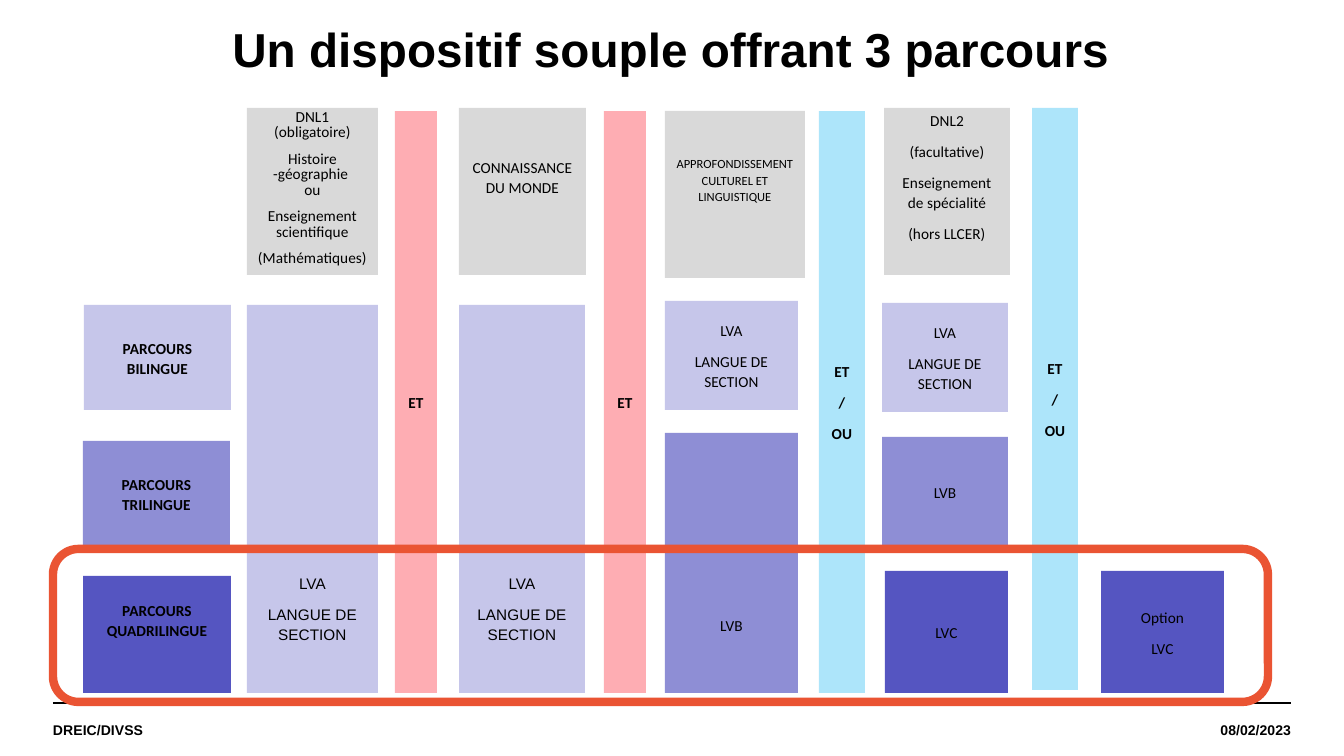
import pptx
import pptx.util
import pptx.dml.color
import pptx.enum.shapes
import pptx.enum.text
import pptx.oxml
import pptx.oxml.ns
from lxml import etree

EMU_PER_PX = 914400 / 134.4
COLORS = {
    "black": "000000",
    "subject": "D9D9D9",
    "bilingual": "C6C6EA",
    "trilingual": "8E8ED5",
    "quadrilingual": "5555C1",
    "and": "FE0214",
    "and_or": "00B0F0",
    "highlight": "EA5433",
}
SHAPES = pptx.enum.shapes.MSO_SHAPE
ALIGN = pptx.enum.text.PP_ALIGN
ANCHOR = pptx.enum.text.MSO_ANCHOR
SECTION = ["LVA", "LANGUE DE SECTION"]


def px(length):
    return pptx.util.Emu(round(length * EMU_PER_PX))


def rgb(name):
    return pptx.dml.color.RGBColor.from_string(COLORS[name])


def place(shape, box):
    shape.left, shape.top, shape.width, shape.height = map(px, box)


def set_margins(frame, left, top, right, bottom):
    frame.margin_left, frame.margin_top = px(left), px(top)
    frame.margin_right, frame.margin_bottom = px(right), px(bottom)


def write(frame, texts, size, bold, font="Arial", align=ALIGN.CENTER, spacing=None, gap=0):
    frame.word_wrap = True
    for index, text in enumerate(texts):
        paragraph = frame.paragraphs[0] if index == 0 else frame.add_paragraph()
        paragraph.text = text
        paragraph.alignment = align
        paragraph.space_before = pptx.util.Pt(0)
        paragraph.space_after = pptx.util.Pt(gap)
        if spacing is not None:
            paragraph.line_spacing = spacing
        paragraph.font.name = font
        paragraph.font.size = pptx.util.Pt(size)
        paragraph.font.bold = bold
        paragraph.font.color.rgb = rgb("black")


def add_title(slide, text):
    title = slide.shapes.title
    place(title, (52, 26, 1238, 79))
    frame = title.text_frame
    frame.auto_size = pptx.enum.text.MSO_AUTO_SIZE.NONE
    frame.vertical_anchor = ANCHOR.TOP
    set_margins(frame, 0, 0, 0, 0)
    write(frame, [text], 25.5, True, spacing=0.9)


def add_footer(slide, text, box, align):
    frame = slide.shapes.add_textbox(*map(px, box)).text_frame
    frame.vertical_anchor = ANCHOR.MIDDLE
    set_margins(frame, 0, 0, 0, 0)
    write(frame, [text], 7.5, True, align=align)


def add_footer_rule(slide):
    rule = slide.shapes.add_connector(
        pptx.enum.shapes.MSO_CONNECTOR.STRAIGHT, px(53), px(703), px(1291), px(703)
    )
    rule.line.color.rgb = rgb("black")
    rule.line.width = pptx.util.Pt(0.75)
    etree.SubElement(rule._element.spPr, pptx.oxml.ns.qn("a:effectLst"))


def add_block(slide, box, color, texts, shift=0, size=8.25, bold=False,
              font="Calibri", spacing=1.07):
    block = slide.shapes.add_shape(SHAPES.RECTANGLE, *map(px, box))
    block.shadow.inherit = False
    block.fill.solid()
    block.fill.fore_color.rgb = rgb(color)
    block.line.fill.background()
    frame = block.text_frame
    frame.vertical_anchor = ANCHOR.MIDDLE
    set_margins(frame, 9, 5 + 2 * max(shift, 0), 9, 5 + 2 * max(-shift, 0))
    write(frame, texts, size, bold, font, spacing=spacing, gap=6)
    return block


def add_link_bar(slide, box, color, texts):
    bar = add_block(slide, box, color, texts, bold=True)
    tint = bar._element.spPr.find(".//" + pptx.oxml.ns.qn("a:srgbClr"))
    etree.SubElement(tint, pptx.oxml.ns.qn("a:alpha"), val="32000")


def add_subjects(slide):
    add_block(slide, (247, 108, 131, 167), "subject",
              ["DNL1 (obligatoire)", "Histoire -géographie \vou",
               "Enseignement scientifique", "(Mathématiques)"],
              shift=-3, spacing=pptx.util.Pt(8.25))
    add_block(slide, (459, 108, 127, 167), "subject", ["CONNAISSANCE DU MONDE"], shift=-15)
    add_block(slide, (665, 111, 140, 167), "subject",
              ["APPROFONDISSEMENT CULTUREL ET LINGUISTIQUE"], shift=-15, size=6.75)
    add_block(slide, (884, 108, 126, 167), "subject",
              ["DNL2", "(facultative)", "Enseignement de spécialité", "(hors LLCER)"],
              shift=-15)


def add_link_bars(slide):
    for left in (395, 604):
        add_link_bar(slide, (left, 111, 42, 582), "and", ["ET"])
    for left, top in ((819, 111), (1032, 108)):
        add_link_bar(slide, (left, top, 46, 582), "and_or", ["ET", "/", "OU"])


def add_pathways(slide):
    for name, color, box, shift in (
        ("BILINGUE", "bilingual", (84, 305, 147, 105), 0),
        ("TRILINGUE", "trilingual", (83, 441, 147, 105), 0),
        ("QUADRILINGUE", "quadrilingual", (83, 576, 148, 117), -15),
    ):
        add_block(slide, box, color, ["PARCOURS " + name], shift, bold=True)


def add_languages(slide):
    for left, width in ((247, 131), (459, 126)):
        add_block(slide, (left, 305, width, 388), "bilingual", SECTION, 109, font="Arial")
    for box, color, texts, shift in (
        ((665, 301, 133, 109), "bilingual", SECTION, 0),
        ((882, 303, 126, 109), "bilingual", SECTION, 0),
        ((665, 433, 133, 260), "trilingual", ["LVB"], 62),
        ((882, 437, 126, 109), "trilingual", ["LVB"], 0),
        ((885, 571, 123, 122), "quadrilingual", ["LVC"], 0),
        ((1101, 571, 123, 122), "quadrilingual", ["Option", "LVC"], 0),
    ):
        add_block(slide, box, color, texts, shift)


def add_highlight(slide):
    outline = slide.shapes.add_shape(
        SHAPES.ROUNDED_RECTANGLE, *map(px, (53, 549, 1215, 153))
    )
    outline.shadow.inherit = False
    outline.fill.background()
    outline.line.color.rgb = rgb("highlight")
    outline.line.width = pptx.util.Pt(4.5)


def main():
    deck = pptx.Presentation()
    deck.slide_width, deck.slide_height = px(1344), px(756)
    slide = deck.slides.add_slide(deck.slide_layouts[5])
    add_footer_rule(slide)
    add_title(slide, "Un dispositif souple offrant 3 parcours")
    add_footer(slide, "08/02/2023", (1119, 704, 172, 52), ALIGN.RIGHT)
    add_footer(slide, "DREIC/DIVSS", (53, 704, 868, 52), ALIGN.LEFT)
    add_subjects(slide)
    add_link_bars(slide)
    add_pathways(slide)
    add_languages(slide)
    add_highlight(slide)
    deck.save("out.pptx")


if __name__ == "__main__":
    main()
